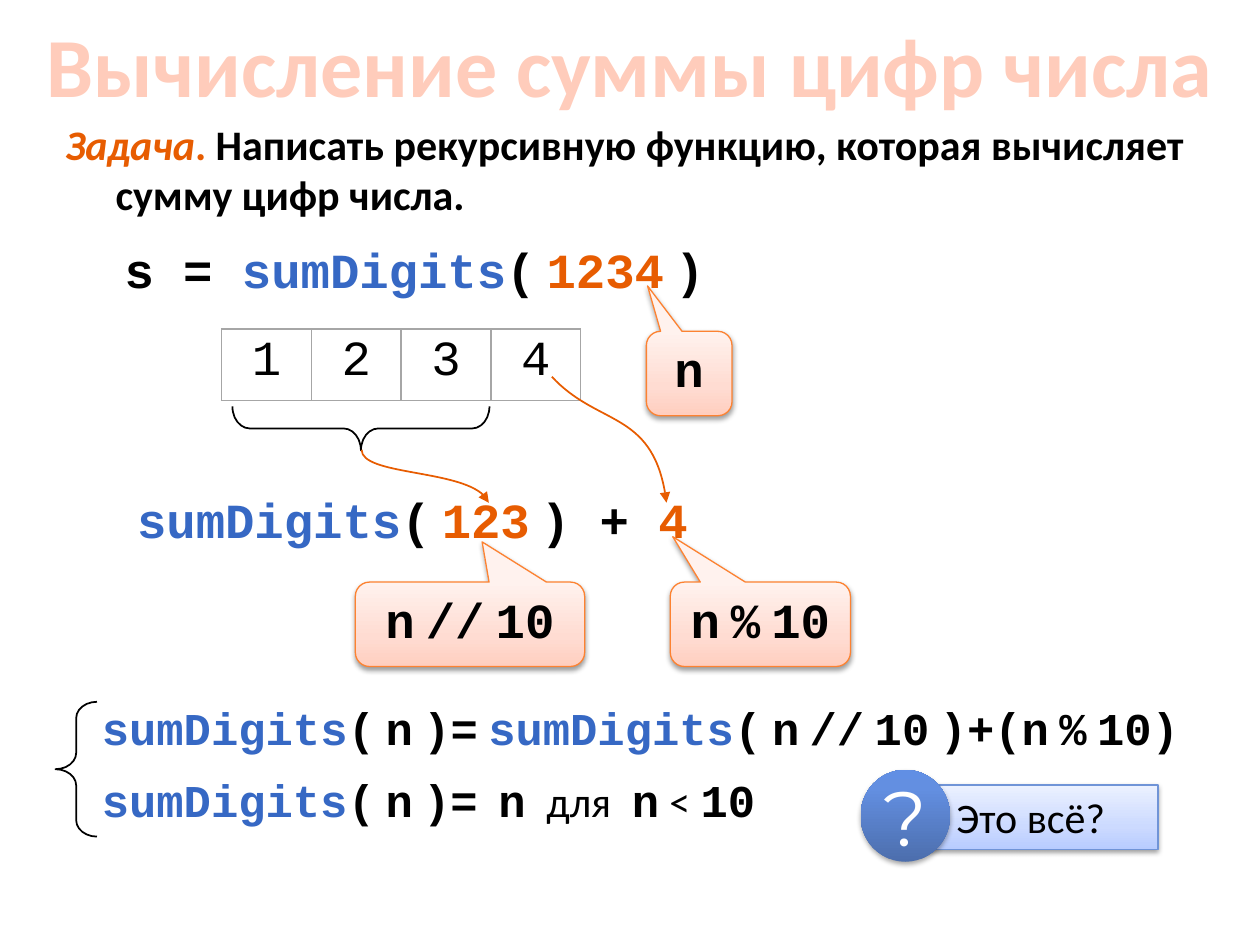
from dataclasses import dataclass
from itertools import groupby

from lxml import etree
from pptx import Presentation
from pptx.dml.color import RGBColor
from pptx.enum.shapes import MSO_SHAPE
from pptx.enum.text import MSO_ANCHOR, PP_ALIGN
from pptx.oxml import parse_xml
from pptx.oxml.ns import nsdecls, qn
from pptx.util import Inches, Pt

TOP, MIDDLE = MSO_ANCHOR.TOP, MSO_ANCHOR.MIDDLE
LEFT, CENTER = PP_ALIGN.LEFT, PP_ALIGN.CENTER
RECTANGLE, OVAL = MSO_SHAPE.RECTANGLE, MSO_SHAPE.OVAL
BRACE, CALLOUT = MSO_SHAPE.LEFT_BRACE, MSO_SHAPE.ROUNDED_RECTANGULAR_CALLOUT


@dataclass(frozen=True)
class Theme:
    body_font: str = "Calibri"
    code_font: str = "Courier New"
    sign_font: str = "Montserrat"
    title_size: int = 48
    sign_size: int = 44
    code_size: int = 28
    formula_size: int = 26
    body_size: int = 24
    black: str = "000000"
    white: str = "FFFFFF"
    orange: str = "E75C01"
    blue: str = "3668C4"
    grid: str = "A6A6A6"
    callout_line: str = "FD8231"
    question_line: str = "7094D7"
    title_line: str = "FA7D2B"
    title_fill: tuple = ((0, "FFD9CE"), (9, "FFCCBB"), (50, "993D00"),
                         (79, "FFCCBB"), (100, "FFD9CE"))
    callout_fill: tuple = ((0, "FFCEBF"), (35, "FFDCD2"), (100, "FFF2EE"))
    question_fill: tuple = ((0, "B8CCFF"), (35, "CCDAFF"), (100, "EBF1FF"))
    sign_fill: tuple = ((0, "4C6EAD"), (80, "638FE1"), (100, "618FE4"))


THEME = Theme()


def rgb(color):
    return RGBColor.from_string(color)


def line_xml(tag, color, points):
    return parse_xml(f'<a:{tag} {nsdecls("a")} w="{Pt(points)}"><a:solidFill>'
                     f'<a:srgbClr val="{color}"/></a:solidFill></a:{tag}>')


def set_gradient(fill, owner, stops, angle):
    """Fill with stops given as (percent, colour) pairs."""
    fill.gradient()
    fill.gradient_angle = angle
    stop_list = next(owner.iter(qn("a:gsLst")))
    for stop in list(stop_list):
        stop_list.remove(stop)
    for percent, color in stops:
        stop = etree.SubElement(stop_list, qn("a:gs"), pos=str(percent * 1000))
        etree.SubElement(stop, qn("a:srgbClr"), val=color)


def add_run(paragraph, text, *, size, font=THEME.body_font, color=THEME.black,
            bold=False, italic=False):
    run = paragraph.add_run()
    run.text = text
    style = run.font
    style.name, style.size, style.bold, style.italic = font, Pt(size), bold, italic
    style.color.rgb = rgb(color)
    return run


def add_code(paragraph, text, *, size=THEME.code_size, color=THEME.black, wide=False):
    """Bold code; spaces are narrow body-font ones unless wide."""
    for is_space, letters in groupby(text, str.isspace):
        font = THEME.body_font if is_space and not wide else THEME.code_font
        add_run(paragraph, "".join(letters), size=size, font=font, color=color, bold=True)


class SlideBuilder:
    def __init__(self, slide, theme):
        self.slide, self.theme = slide, theme

    def text(self, box, anchor=TOP, align=LEFT, margin=0, indent=0):
        frame = self.slide.shapes.add_textbox(*map(Inches, box)).text_frame
        frame.word_wrap = True
        frame.vertical_anchor = anchor
        paragraph = frame.paragraphs[0]
        paragraph.alignment = align
        properties = paragraph._p.get_or_add_pPr()
        properties.set("marL", str(Inches(margin)))
        properties.set("indent", str(Inches(indent)))
        return paragraph

    def title(self, box, text):
        run = add_run(self.text(box, MIDDLE, CENTER), text,
                      size=self.theme.title_size, bold=True)
        properties = run.font._element
        set_gradient(run.font.fill, properties, self.theme.title_fill, 270)
        properties.insert(0, line_xml("ln", self.theme.title_line, 0.83))

    def shape(self, kind, box, stops=None, line=None, width=0.75, adjust=(), shadow=38):
        shape = self.slide.shapes.add_shape(kind, *map(Inches, box))
        shape.shadow.inherit = False
        for index, value in enumerate(adjust):
            shape.adjustments[index] = value
        if line:
            shape.line.color.rgb = rgb(line)
            shape.line.width = Pt(width)
        else:
            shape.line.fill.background()
        if stops:
            properties = shape._element.spPr
            set_gradient(shape.fill, properties, stops, 90)
            properties.find(qn("a:effectLst")).append(parse_xml(
                f'<a:outerShdw {nsdecls("a")} blurRad="{Pt(3.1)}" dist="{Pt(1.6)}" '
                f'dir="5400000" rotWithShape="0"><a:srgbClr val="{self.theme.black}">'
                f'<a:alpha val="{shadow * 1000}"/></a:srgbClr></a:outerShdw>'))
        else:
            shape.fill.background()
        return shape

    def brace(self, box, rotation=0):
        shape = self.shape(BRACE, box, line=self.theme.black, width=1, adjust=(0.393, 0.5))
        shape.rotation = rotation

    def callout(self, box, text, tip=(-0.486, -1.038)):
        shape = self.shape(CALLOUT, box, self.theme.callout_fill,
                           self.theme.callout_line, adjust=(*tip, 0.167))
        shape.text_frame.vertical_anchor = MIDDLE
        paragraph = shape.text_frame.paragraphs[0]
        paragraph.alignment = CENTER
        paragraph.line_spacing = 0.8
        add_code(paragraph, text)

    def curved_arrow(self, start, *controls_and_end):
        builder = self.slide.shapes.build_freeform(*map(Inches, start))
        builder.add_line_segments([tuple(map(Inches, point)) for point in controls_and_end],
                                  close=False)
        arrow = builder.convert_to_shape()
        arrow.shadow.inherit = False
        arrow.fill.background()
        arrow.line.color.rgb = rgb(self.theme.orange)
        arrow.line.width = Pt(1)
        etree.SubElement(arrow.line._get_or_add_ln(), qn("a:tailEnd"), type="triangle")
        # Turn the three straight segments into one Bezier curve
        outline = next(arrow._element.iter(qn("a:path")))
        curve = etree.SubElement(outline, qn("a:cubicBezTo"))
        for segment in outline.findall(qn("a:lnTo")):
            curve.append(segment[0])
            outline.remove(segment)

    def digit_table(self, box, digits):
        table = self.slide.shapes.add_table(1, len(digits), *map(Inches, box)).table
        table.first_row = table.horz_banding = False
        for cell, digit in zip(table.rows[0].cells, digits):
            cell.fill.background()
            paragraph = cell.text_frame.paragraphs[0]
            paragraph.alignment = CENTER
            add_run(paragraph, digit, size=self.theme.code_size, font=self.theme.code_font)
            for index, side in enumerate(("lnL", "lnR", "lnT", "lnB")):
                cell._tc.get_or_add_tcPr().insert(index, line_xml(side, self.theme.grid, 1))

    def question(self, box, text, sign_box):
        panel = self.shape(RECTANGLE, box, self.theme.question_fill, self.theme.question_line)
        panel.text_frame.margin_left = Inches(0.25)
        paragraph = panel.text_frame.paragraphs[0]
        paragraph.alignment = LEFT
        add_run(paragraph, text, size=self.theme.body_size)
        sign = self.shape(OVAL, sign_box, self.theme.sign_fill, shadow=35)
        sign.text_frame.word_wrap = False
        sign.text_frame.vertical_anchor = MIDDLE
        mark = sign.text_frame.paragraphs[0]
        mark.alignment = CENTER
        add_run(mark, "?", size=self.theme.sign_size, font=self.theme.sign_font,
                color=self.theme.white)


def main():
    deck = Presentation()
    deck.slide_width, deck.slide_height = Inches(10), Inches(7.5)
    page = SlideBuilder(deck.slides.add_slide(deck.slide_layouts[6]), THEME)
    body, formula = THEME.body_size, THEME.formula_size
    orange, blue = THEME.orange, THEME.blue

    # Title and task
    page.title((0, 0.16, 10, 0.69), "Вычисление суммы цифр числа")
    task = page.text((0.42, 0.89, 9.27, 0.91), margin=0.4, indent=-0.4)
    add_run(task, "Задача", size=body, color=orange, bold=True, italic=True)
    add_run(task, ". ", size=body, color=orange, bold=True)
    add_run(task, "Написать рекурсивную функцию, которая вычисляет сумму цифр числа.",
            size=body, bold=True)

    # Call and its digits
    page.digit_table((1.76, 2.61, 2.85, 0.57), "1234")
    call = page.text((0.79, 1.85, 5.33, 0.57), MIDDLE, indent=0.1)
    add_code(call, "s = ", wide=True)
    add_code(call, "sumDigits", color=blue)
    add_code(call, "( ")
    add_code(call, "1234 ", color=orange)
    add_code(call, ")")

    # Split into the leading digits and the last one
    split = page.text((0.89, 3.83, 5.33, 0.57), MIDDLE, indent=0.1)
    add_code(split, "sumDigits", color=blue)
    add_code(split, "( ")
    add_code(split, "123 ", color=orange)
    add_code(split, ") + ", wide=True)
    add_code(split, "4", color=orange)
    page.brace((2.69, 2.38, 0.35, 2.04), rotation=270)
    page.curved_arrow((4.38, 2.99), (4.74, 3.38), (5.2, 3.25), (5.29, 3.99))
    page.curved_arrow((2.87, 3.57), (2.87, 3.77), (3.77, 3.72), (3.88, 3.99))

    # Callouts
    page.callout((2.82, 4.62, 1.82, 0.67), "n // 10", tip=(0.053, -0.976))
    page.callout((5.32, 4.62, 1.43, 0.67), "n % 10")
    page.callout((5.13, 2.63, 0.68, 0.67), "n")

    # Recursive definition
    page.brace((0.44, 5.57, 0.33, 1.07))
    step = page.text((0.71, 5.51, 9.15, 0.54))
    add_code(step, "sumDigits", size=formula, color=blue)
    add_code(step, "( n )= ", size=formula)
    add_code(step, "sumDigits", size=formula, color=blue)
    add_code(step, "( n // 10 )+(n % 10)", size=formula)
    base = page.text((0.71, 6.08, 5.83, 0.54))
    add_code(base, "sumDigits", size=formula, color=blue)
    add_code(base, "( n )=  n  ", size=formula)
    add_run(base, "для", size=body)
    add_code(base, "  n ", size=formula)
    add_run(base, "<", size=body)
    add_code(base, " 10", size=formula)

    # Question
    page.question((7.34, 6.23, 1.85, 0.51), "Это всё?", (6.83, 6.11, 0.71, 0.73))

    deck.save("out.pptx")


if __name__ == "__main__":
    main()
